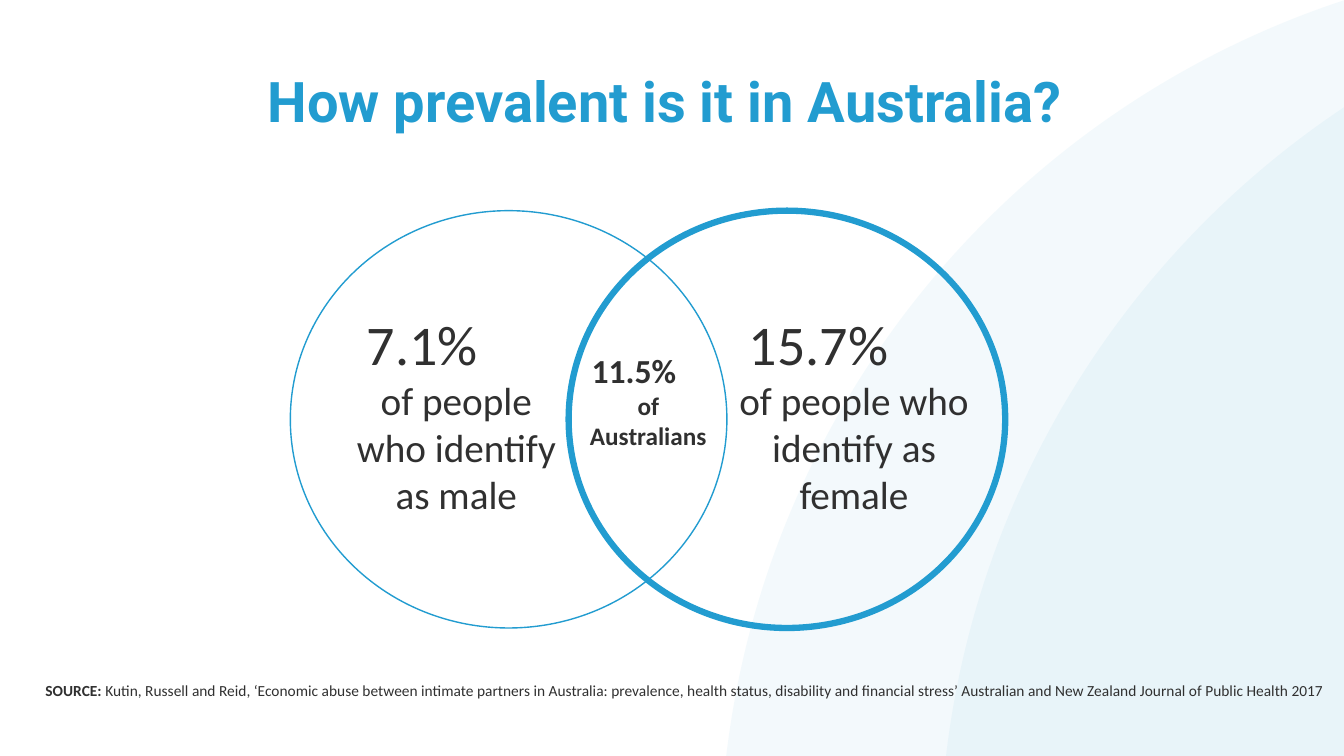
"""Build a slide showing how prevalent economic abuse is in Australia."""
from dataclasses import dataclass

from lxml import etree
from pptx import Presentation
from pptx.dml.color import RGBColor
from pptx.enum.shapes import MSO_SHAPE
from pptx.enum.text import MSO_ANCHOR, PP_ALIGN
from pptx.oxml.ns import qn
from pptx.util import Inches, Pt

OVAL = MSO_SHAPE.OVAL
RECTANGLE = MSO_SHAPE.RECTANGLE
TOP = MSO_ANCHOR.TOP
CENTER, LEFT = PP_ALIGN.CENTER, PP_ALIGN.LEFT

COLORS = {"blue": "229CD0", "ink": "303030", "white": "FFFFFF"}
TITLE_FONT, BODY_FONT = "Roboto", "Calibri"
CIRCLE_TOP, CIRCLE_WIDTH, CIRCLE_HEIGHT = 2.09, 4.33, 4.14
ARC_TOP, ARC_SIZE, ARC_ALPHA = -0.45, 18.02, 5
ARC_LEFTS = (7.14, 9.32)


@dataclass(frozen=True)
class Circle:
    """Position and outline of one Venn circle."""

    left: float
    line_width: float


@dataclass(frozen=True)
class Statistic:
    """A figure with the group it describes."""

    figure: str
    group: str
    box: tuple[float, float, float, float]
    figure_size: int
    group_size: int
    figure_indent: float
    bold: bool = False
    filled: bool = False


MALE_CIRCLE = Circle(2.88, 1)
FEMALE_CIRCLE = Circle(5.64, 4.5)
STATISTICS = (
    Statistic("11.5%", "of Australians", (5.7, 3.42, 1.46, 1.38), 24, 18, 0.07, bold=True),
    Statistic("7.1%", "of people who identify as male", (3.38, 3.02, 2.29, 2.19),
              40, 28, 0.16, filled=True),
    Statistic("15.7%", "of people who identify as female", (7.21, 3.02, 2.52, 2.19),
              40, 28, 0.12),
)
SOURCE_LABEL = "SOURCE: "
SOURCE_TEXT = (
    "Kutin, Russell and Reid, ‘Economic abuse between intimate partners in Australia: "
    "prevalence, health status, disability and financial stress’ "
    "Australian and New Zealand Journal of Public Health 2017"
)


def color(name: str) -> RGBColor:
    """Return a named palette colour."""
    return RGBColor.from_string(COLORS[name])


def format_run(run, font: str, size: float, bold: bool, color_name: str) -> None:
    """Apply the typeface, size, weight and colour to a run."""
    run.font.name = font
    run.font.size = Pt(size)
    run.font.bold = bold
    run.font.color.rgb = color(color_name)


def add_plain_shape(slide, kind, box: tuple[float, float, float, float]):
    """Add a shape without shadow, fill or line."""
    shape = slide.shapes.add_shape(kind, *map(Inches, box))
    shape.shadow.inherit = False
    shape.fill.background()
    shape.line.fill.background()
    return shape


def add_arc(slide, left: float) -> None:
    """Add a large translucent background disc."""
    shape = add_plain_shape(slide, OVAL, (left, ARC_TOP, ARC_SIZE, ARC_SIZE))
    shape.fill.solid()
    shape.fill.fore_color.rgb = color("blue")
    fill_color = shape.fill._xPr.find(qn("a:solidFill"))[0]
    etree.SubElement(fill_color, qn("a:alpha")).set("val", str(ARC_ALPHA * 1000))


def add_circle(slide, circle: Circle) -> None:
    """Add one outlined Venn circle."""
    box = (circle.left, CIRCLE_TOP, CIRCLE_WIDTH, CIRCLE_HEIGHT)
    shape = add_plain_shape(slide, OVAL, box)
    shape.line.color.rgb = color("blue")
    shape.line.width = Pt(circle.line_width)


def add_statistic(slide, statistic: Statistic) -> None:
    """Add a figure above its centred description."""
    shape = add_plain_shape(slide, RECTANGLE, statistic.box)
    if statistic.filled:
        shape.fill.solid()
        shape.fill.fore_color.rgb = color("white")
    frame = shape.text_frame
    frame.word_wrap = True
    frame.vertical_anchor = TOP
    frame.text = f"{statistic.figure}\n{statistic.group}"
    figure, group = frame.paragraphs
    figure.alignment, group.alignment = LEFT, CENTER
    figure._p.get_or_add_pPr().set("marL", str(Inches(statistic.figure_indent)))
    format_run(figure.runs[0], BODY_FONT, statistic.figure_size, statistic.bold, "ink")
    format_run(group.runs[0], BODY_FONT, statistic.group_size, statistic.bold, "ink")


def add_source(slide) -> None:
    """Add the source line at the foot of the slide."""
    shape = slide.shapes.add_textbox(*map(Inches, (0.26, 6.49, 13.08, 0.57)))
    frame = shape.text_frame
    frame.word_wrap = True
    frame.margin_left, frame.margin_top = Inches(0.19), Inches(0.27)
    for text, bold in ((SOURCE_LABEL, True), (SOURCE_TEXT, False)):
        run = frame.paragraphs[0].add_run()
        run.text = text
        format_run(run, BODY_FONT, 11, bold, "ink")


def place_title(slide) -> None:
    """Fill, move and format the title placeholder."""
    title = slide.shapes.title
    title.left, title.top, title.width, title.height = map(Inches, (0.35, 0.69, 12.48, 1.22))
    frame = title.text_frame
    frame.text = "How prevalent is it in Australia?"
    frame.vertical_anchor = TOP
    paragraph = frame.paragraphs[0]
    paragraph.alignment = CENTER
    paragraph.line_spacing = 0.9
    format_run(paragraph.runs[0], TITLE_FONT, 40, True, "blue")
    slide.shapes._spTree.append(title._element)


def main() -> None:
    """Build and save the presentation."""
    presentation = Presentation()
    presentation.slide_width, presentation.slide_height = Inches(13.33), Inches(7.5)
    slide = presentation.slides.add_slide(presentation.slide_layouts[5])
    for left in ARC_LEFTS:
        add_arc(slide, left)
    place_title(slide)
    add_source(slide)
    add_circle(slide, MALE_CIRCLE)
    for statistic in STATISTICS:
        add_statistic(slide, statistic)
    add_circle(slide, FEMALE_CIRCLE)
    presentation.save("out.pptx")


if __name__ == "__main__":
    main()
